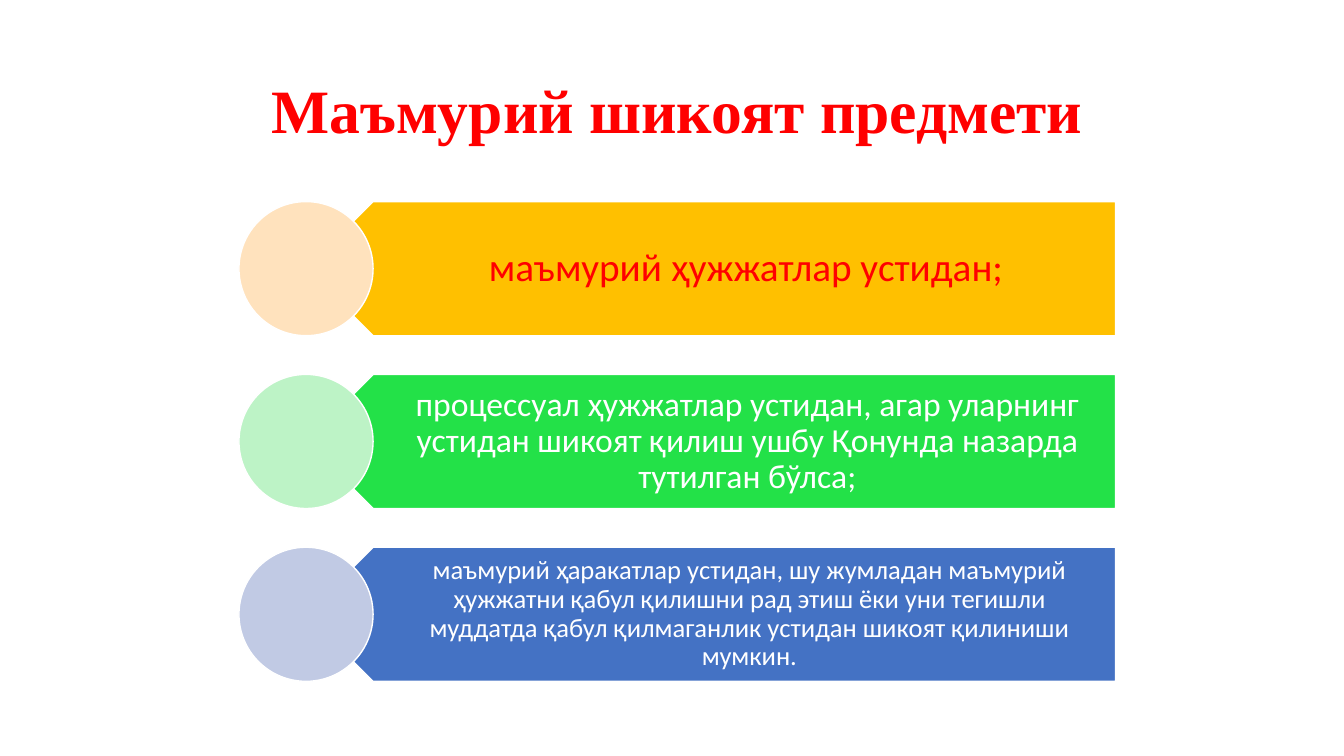
from dataclasses import dataclass

import pptx
import pptx.dml.color
import pptx.enum.shapes
import pptx.enum.text
import pptx.util

Pt = pptx.util.Pt
ShapeType = pptx.enum.shapes.MSO_SHAPE

COLORS: dict[str, str] = {
    "white": "FFFFFF",
    "red": "FF0000",
    "amber": "FFC000",
    "pale amber": "FFE2BD",
    "green": "23E148",
    "pale green": "BDF3C6",
    "blue": "4472C4",
    "pale blue": "C1CAE4",
}

FIRST_TOP = 144
ROW_PITCH = 123.45
ROW_HEIGHT = 95.8
CIRCLE_LEFT = 170.7
ARROW_LEFT = CIRCLE_LEFT + ROW_HEIGHT / 2
ARROW_WIDTH = 578.3
LABEL_LEFT = ARROW_LEFT + ROW_HEIGHT / 4
LABEL_WIDTH = ARROW_WIDTH - ROW_HEIGHT / 4


@dataclass
class ComplaintSubject:
    text: str
    size: float
    text_color: str
    arrow_color: str
    circle_color: str


SUBJECTS = [
    ComplaintSubject("маъмурий ҳужжатлар устидан;", 28, "red", "amber", "pale amber"),
    ComplaintSubject(
        "процессуал ҳужжатлар устидан, агар уларнинг устидан шикоят қилиш "
        "ушбу Қонунда назарда тутилган бўлса;",
        24, "white", "green", "pale green",
    ),
    ComplaintSubject(
        "маъмурий ҳаракатлар устидан, шу жумладан маъмурий ҳужжатни қабул "
        "қилишни рад этиш ёки уни тегишли муддатда қабул қилмаганлик устидан "
        "шикоят қилиниши мумкин.",
        19, "white", "blue", "pale blue",
    ),
]


def rgb(name: str) -> pptx.dml.color.RGBColor:
    return pptx.dml.color.RGBColor.from_string(COLORS[name])


def write_centred(
    text_frame: pptx.text.text.TextFrame,
    text: str, font_name: str, size: float, color: str, bold: bool = False,
) -> None:
    text_frame.text = text
    text_frame.word_wrap = True
    text_frame.auto_size = pptx.enum.text.MSO_AUTO_SIZE.NONE
    text_frame.vertical_anchor = pptx.enum.text.MSO_ANCHOR.MIDDLE
    paragraph = text_frame.paragraphs[0]
    paragraph.alignment = pptx.enum.text.PP_ALIGN.CENTER
    paragraph.line_spacing = 0.9
    font = paragraph.runs[0].font
    font.name = font_name
    font.size = Pt(size)
    font.bold = bold
    font.color.rgb = rgb(color)


def add_outlined_shape(
    slide: pptx.slide.Slide, shape_type: ShapeType,
    left: float, top: float, width: float, color: str,
) -> pptx.shapes.autoshape.Shape:
    shape = slide.shapes.add_shape(
        shape_type, Pt(left), Pt(top), Pt(width), Pt(ROW_HEIGHT)
    )
    shape.shadow.inherit = False
    shape.fill.solid()
    shape.fill.fore_color.rgb = rgb(color)
    shape.line.color.rgb = rgb("white")
    shape.line.width = Pt(1)
    return shape


def add_label(slide: pptx.slide.Slide, subject: ComplaintSubject, top: float) -> None:
    """Place upright text over the rotated arrow, with margins that follow the font size."""
    label = slide.shapes.add_textbox(
        Pt(LABEL_LEFT), Pt(top), Pt(LABEL_WIDTH), Pt(ROW_HEIGHT)
    )
    text_frame = label.text_frame
    text_frame.margin_left = Pt(41.8)
    text_frame.margin_right = Pt(subject.size * 0.56)
    text_frame.margin_top = text_frame.margin_bottom = Pt(subject.size * 0.3)
    write_centred(text_frame, subject.text, "Calibri", subject.size, subject.text_color)


def add_subject(slide: pptx.slide.Slide, subject: ComplaintSubject, top: float) -> None:
    arrow = add_outlined_shape(
        slide, ShapeType.PENTAGON, ARROW_LEFT, top, ARROW_WIDTH, subject.arrow_color
    )
    arrow.rotation = 180
    add_label(slide, subject, top)
    add_outlined_shape(
        slide, ShapeType.OVAL, CIRCLE_LEFT, top, ROW_HEIGHT, subject.circle_color
    )


def add_title(slide: pptx.slide.Slide) -> None:
    title = slide.shapes.title
    title.left, title.top = Pt(25.2), Pt(28.8)
    title.width, title.height = Pt(917.3), Pt(104.4)
    write_centred(
        title.text_frame, "Маъмурий шикоят предмети", "Times New Roman", 44, "red", bold=True
    )


def main() -> None:
    presentation = pptx.Presentation()
    presentation.slide_width, presentation.slide_height = Pt(960), Pt(540)
    title_only_layout = presentation.slide_layouts[5]
    slide = presentation.slides.add_slide(title_only_layout)
    add_title(slide)
    for row, subject in enumerate(SUBJECTS):
        add_subject(slide, subject, FIRST_TOP + row * ROW_PITCH)
    presentation.save("out.pptx")


if __name__ == "__main__":
    main()
